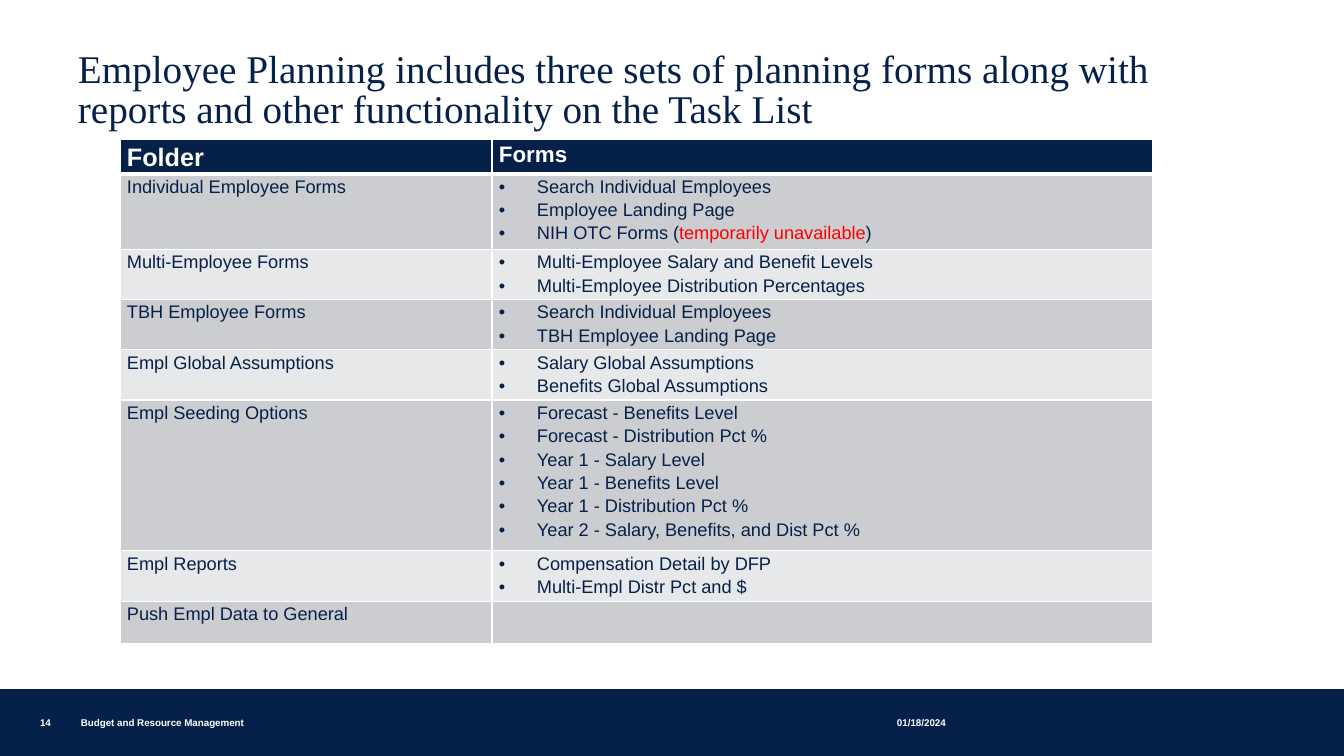
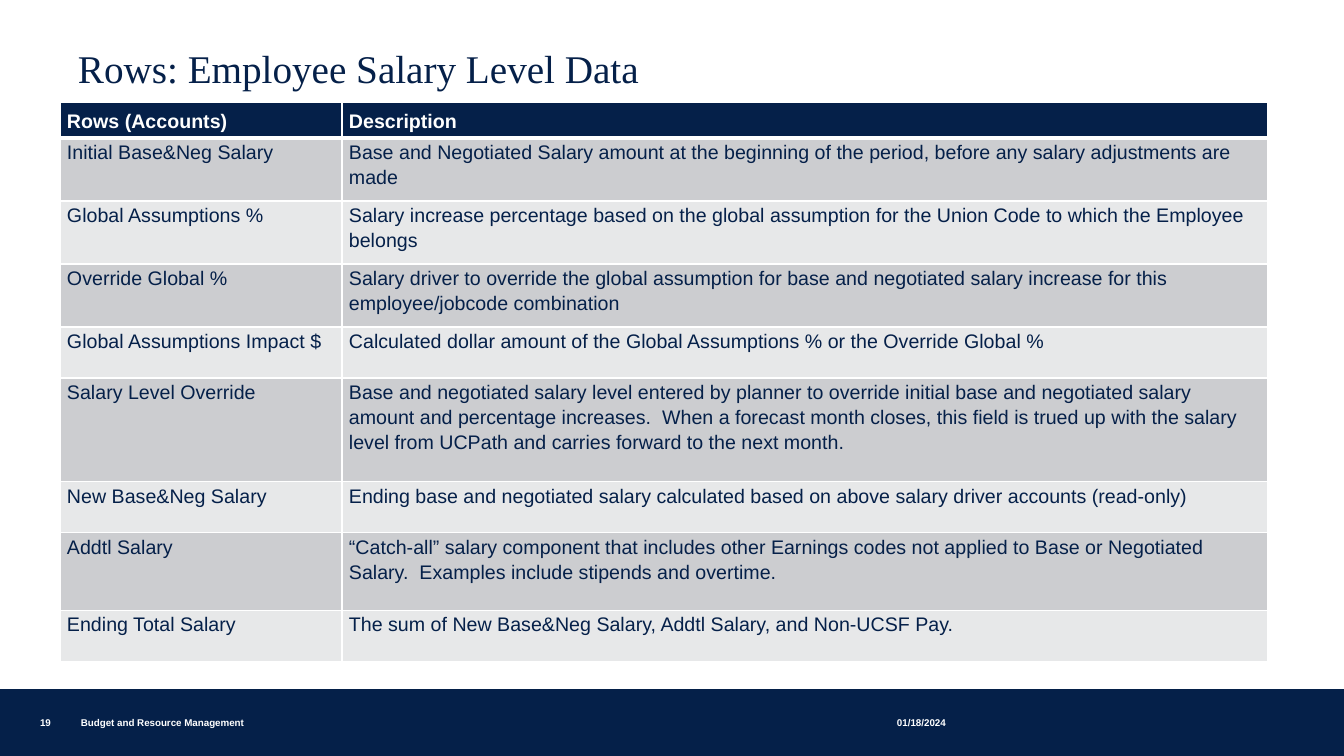
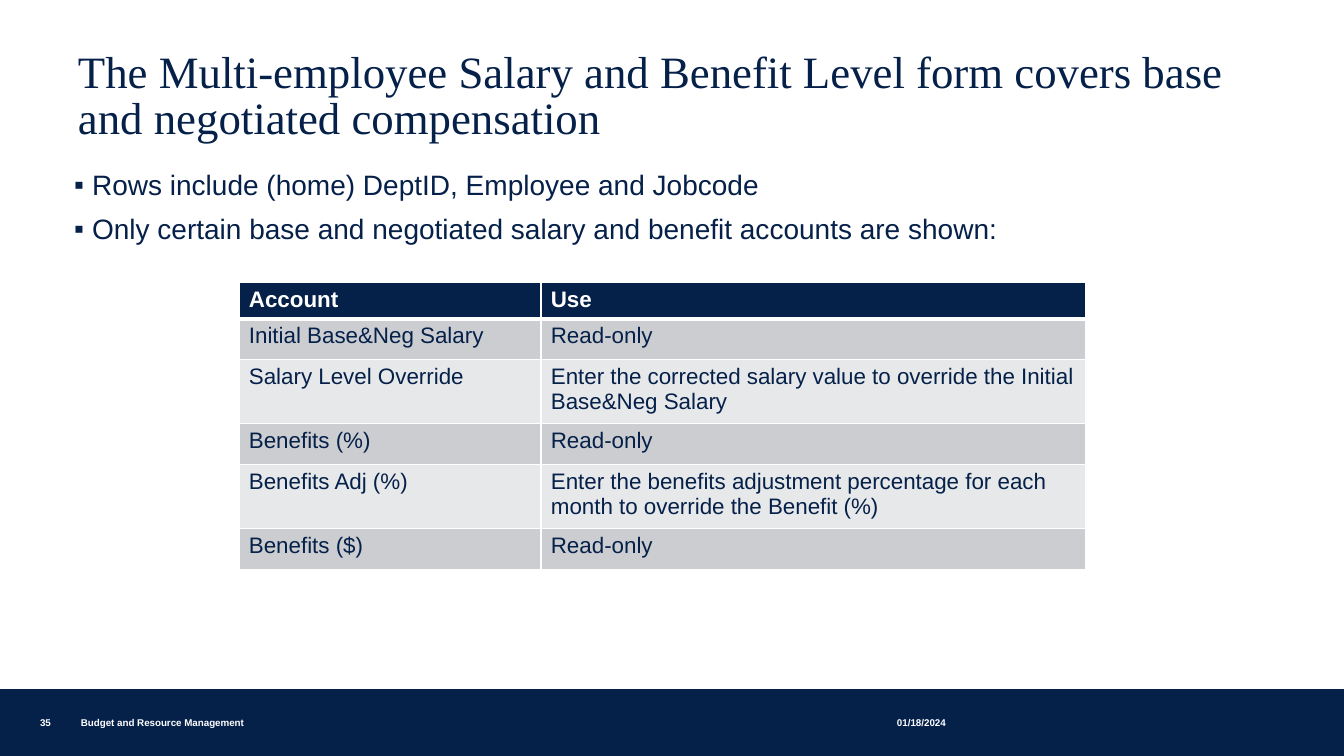
from lxml.etree import SubElement
from pptx import Presentation
from pptx.dml.color import RGBColor
from pptx.enum.shapes import MSO_SHAPE
from pptx.enum.text import MSO_ANCHOR, PP_ALIGN
from pptx.oxml.ns import qn
from pptx.util import Emu, Pt

NAVY, WHITE, RED = "052049", "FFFFFF", "FF0000"
BANDS = ("CCCDD0", "E7E8E9")
WIDE, HIGH = 1344, 756
SCALE = 12192000 / WIDE

# Left, width and top of each footer field
FOOT_TOP, FOOT_HIGH = 712, 17
NUMBER, OFFICE, DATE = (40, 36), (81, 634), (897, 136)

# A tuple of text parts alternates navy and red
FOLDERS = [
    ("Folder", "Forms"),
    ("Individual Employee Forms", [
        "Search Individual Employees",
        "Employee Landing Page",
        ("NIH OTC Forms (", "temporarily unavailable", ")")]),
    ("Multi-Employee Forms", [
        "Multi-Employee Salary and Benefit Levels",
        "Multi-Employee Distribution Percentages"]),
    ("TBH Employee Forms", [
        "Search Individual Employees",
        "TBH Employee Landing Page"]),
    ("Empl Global Assumptions", [
        "Salary Global Assumptions",
        "Benefits Global Assumptions"]),
    ("Empl Seeding Options", [
        "Forecast - Benefits Level",
        "Forecast - Distribution Pct %",
        "Year 1 - Salary Level",
        "Year 1 - Benefits Level",
        "Year 1 - Distribution Pct %",
        "Year 2 - Salary, Benefits, and Dist Pct %"]),
    ("Empl Reports", [
        "Compensation Detail by DFP",
        "Multi-Empl Distr Pct and $"]),
    ("Push Empl Data to General", []),
]

SALARY = [
    ("Rows (Accounts)", "Description"),
    ("Initial Base&Neg Salary",
     "Base and Negotiated Salary amount at the beginning of the period, "
     "before any salary adjustments are made"),
    ("Global Assumptions %",
     "Salary increase percentage based on the global assumption for the "
     "Union Code to which the Employee belongs"),
    ("Override Global %",
     "Salary driver to override the global assumption for base and "
     "negotiated salary increase for this employee/jobcode combination"),
    ("Global Assumptions Impact $",
     "Calculated dollar amount of the Global Assumptions % or the "
     "Override Global %"),
    ("Salary Level Override",
     "Base and negotiated salary level entered by planner to override "
     "initial base and negotiated salary amount and percentage increases.  "
     "When a forecast month closes, this field is trued up with the salary "
     "level from UCPath and carries forward to the next month."),
    ("New Base&Neg Salary",
     "Ending base and negotiated salary calculated based on above salary "
     "driver accounts (read-only)"),
    ("Addtl Salary",
     "“Catch-all” salary component that includes other Earnings codes not "
     "applied to Base or Negotiated Salary.  Examples include stipends and "
     "overtime."),
    ("Ending Total Salary",
     "The sum of New Base&Neg Salary, Addtl Salary, and Non-UCSF Pay."),
]

ACCOUNTS = [
    ("Account", "Use"),
    ("Initial Base&Neg Salary", "Read-only"),
    ("Salary Level Override",
     "Enter the corrected salary value to override the Initial Base&Neg "
     "Salary"),
    ("Benefits (%)", "Read-only"),
    ("Benefits Adj (%)",
     "Enter the benefits adjustment percentage for each month to override "
     "the Benefit (%)"),
    ("Benefits ($)", "Read-only"),
]

SLIDES = [
    dict(page=14, size=28,
         title="Employee Planning includes three sets of planning forms "
               "along with reports and other functionality on the Task List",
         table=dict(data=FOLDERS, at=(120, 139), cols=(372, 661),
                    rows=(34, 74, 49, 49, 49, 148, 49, 42),
                    heads=(18, 16), size=13, gap=1.15, pad=(7, 0))),
    dict(page=19, size=28, title="Rows: Employee Salary Level Data",
         table=dict(data=SALARY, at=(60, 102), cols=(282, 926),
                    rows=(36, 63, 63, 63, 51, 104, 51, 78, 51),
                    heads=(14, 14), size=14, gap=1.15, pad=(7, 0),
                    anchor=MSO_ANCHOR.MIDDLE)),
    dict(page=35, size=32,
         title="The Multi-employee Salary and Benefit Level form covers "
               "base and negotiated compensation",
         points=["Rows include (home) DeptID, Employee and Jobcode",
                 "Only certain base and negotiated salary and benefit "
                 "accounts are shown:"],
         table=dict(data=ACCOUNTS, at=(239, 282), cols=(302, 545),
                    rows=(35, 41, 60, 41, 60, 41),
                    heads=(16, 16), size=16, gap=1.0, pad=(10, 5))),
]


def px(*sizes):
    return [Emu(round(size * SCALE)) for size in sizes]


def paint(fill, color):
    fill.solid()
    fill.fore_color.rgb = RGBColor.from_string(color)


def apply(target, **values):
    for name, value in values.items():
        setattr(target, name, value)


def inset(target, side, top):
    """Set equal margins left and right, and top and bottom."""
    names = ("margin_left", "margin_right", "margin_top", "margin_bottom")
    apply(target, **dict(zip(names, px(side, side, top, top))))


def bullet(para, mark, hang):
    props = para._p.get_or_add_pPr()
    width = px(hang)[0]
    props.set("marL", str(width))
    props.set("indent", str(-width))
    SubElement(props, qn("a:buFont")).set("typeface", "Arial")
    SubElement(props, qn("a:buChar")).set("char", mark)


def write(frame, lines, size, color=NAVY, face="Arial", bold=False,
          gap=1.0, before=0, mark=None, hang=0):
    """Write one paragraph for each line."""
    for i, line in enumerate(lines):
        para = frame.add_paragraph() if i else frame.paragraphs[0]
        if mark:
            bullet(para, mark, hang)
        apply(para, alignment=PP_ALIGN.LEFT, line_spacing=gap,
              space_before=Pt(before if i else 0))
        parts = line if isinstance(line, tuple) else (line,)
        for j, part in enumerate(parts):
            run = para.add_run()
            run.text = part
            apply(run.font, size=Pt(size), name=face, bold=bold)
            run.font.color.rgb = RGBColor.from_string(RED if j % 2 else color)


def add_text(slide, box, lines, size, pad=(10, 5), anchor=MSO_ANCHOR.TOP,
             **style):
    frame = slide.shapes.add_textbox(*px(*box)).text_frame
    apply(frame, word_wrap=True, vertical_anchor=anchor)
    inset(frame, *pad)
    write(frame, lines, size, **style)


def rule(cell, head):
    """Draw the white cell borders, with a thick one below the head."""
    widths = dict(lnL=1, lnR=1, lnT=1, lnB=3) if head else dict(
        lnL=1, lnR=1, lnB=1)
    props = cell._tc.get_or_add_tcPr()
    for side, width in widths.items():
        line = SubElement(props, qn("a:" + side), w=str(Pt(width)))
        fill = SubElement(line, qn("a:solidFill"))
        SubElement(fill, qn("a:srgbClr"), val=WHITE)


def add_grid(slide, data, at, cols, rows, heads, size, gap, pad,
             anchor=MSO_ANCHOR.TOP):
    box = px(*at, sum(cols), sum(rows))
    grid = slide.shapes.add_table(len(rows), len(cols), *box).table
    for col, width in zip(grid.columns, px(*cols)):
        col.width = width
    for row, height in zip(grid.rows, px(*rows)):
        row.height = height
    for r, texts in enumerate(data):
        for c, text in enumerate(texts):
            cell, head = grid.cell(r, c), r == 0
            rule(cell, head)
            paint(cell.fill, NAVY if head else BANDS[(r - 1) % 2])
            inset(cell, *pad)
            cell.vertical_anchor = anchor if head else MSO_ANCHOR.TOP
            listed = isinstance(text, list)
            write(cell.text_frame, text if listed else [text],
                  heads[c] if head else size, WHITE if head else NAVY,
                  bold=head, gap=gap, mark="•" if listed else None, hang=38)


def add_frame(slide, page, title, size):
    """Add what all slides share: band, title and footer."""
    band = slide.shapes.add_shape(MSO_SHAPE.RECTANGLE,
                                  *px(0, 690, WIDE, HIGH - 690))
    band.shadow.inherit = False
    paint(band.fill, NAVY)
    paint(band.line.fill, NAVY)
    band.line.width = Pt(1.5)
    add_text(slide, (68, 47, 1189, 92), [title], size,
             face="Times New Roman", gap=0.85)
    fields = ((NUMBER, str(page)), (OFFICE, "Budget and Resource Management"),
              (DATE, "01/18/2024"))
    for (left, width), text in fields:
        add_text(slide, (left, FOOT_TOP, width, FOOT_HIGH), [text], 7,
                 pad=(0, 0), anchor=MSO_ANCHOR.BOTTOM, color=WHITE, bold=True)


def main():
    deck = Presentation()
    deck.slide_width, deck.slide_height = px(WIDE, HIGH)
    for item in SLIDES:
        slide = deck.slides.add_slide(deck.slide_layouts[6])
        add_frame(slide, item["page"], item["title"], item["size"])
        if "points" in item:
            add_text(slide, (64, 166, 1224, 100), item["points"], 20,
                     gap=0.9, before=10, mark="▪", hang=18)
        add_grid(slide, **item["table"])
    deck.save("out.pptx")


if __name__ == "__main__":
    main()
